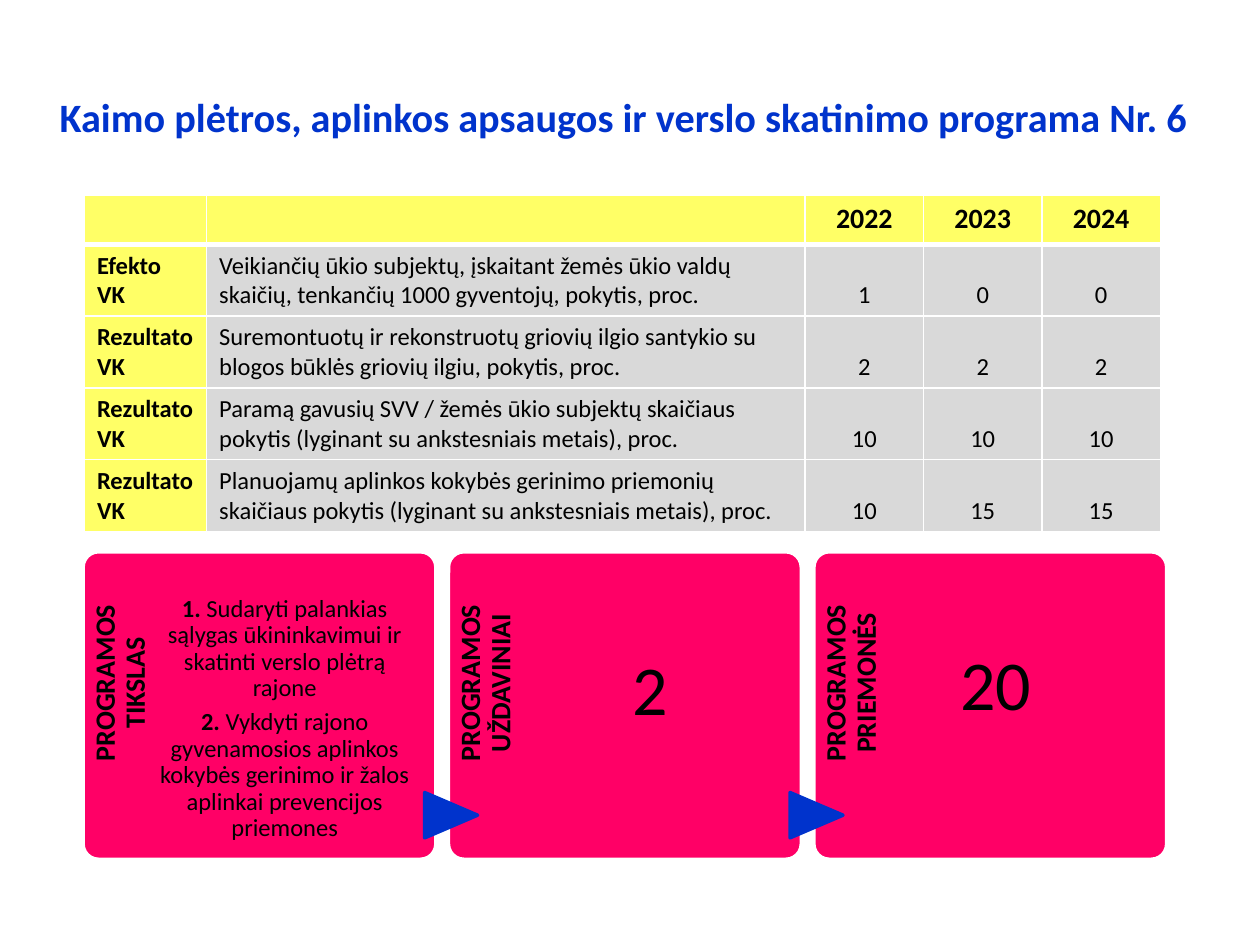
"""Build the slide on rural development programme No. 6: indicators, goals and measures."""

from dataclasses import dataclass

from lxml.etree import SubElement
from pptx import Presentation
from pptx.dml.color import RGBColor
from pptx.enum.shapes import MSO_SHAPE
from pptx.enum.text import MSO_ANCHOR, PP_ALIGN
from pptx.oxml.ns import qn
from pptx.shapes.autoshape import Shape
from pptx.slide import Slide
from pptx.table import _Cell
from pptx.text.text import _Paragraph
from pptx.util import Inches, Pt


@dataclass(frozen=True)
class Theme:
    font: str = "Calibri"
    blue: str = "0033CC"
    yellow: str = "FFFF66"
    grey: str = "D9D9D9"
    pink: str = "FF0066"
    black: str = "000000"
    white: str = "FFFFFF"
    title_size: float = 23
    heading_size: float = 16
    body_size: float = 14
    number_size: float = 40


@dataclass(frozen=True)
class Indicator:
    kind: str
    name: str
    values: tuple[int, int, int]


@dataclass(frozen=True)
class Card:
    heading: str
    paragraphs: tuple[tuple[str, str], ...]
    size: float
    top_inset: float
    left_inset: float = 0
    alignment: PP_ALIGN = PP_ALIGN.CENTER


THEME = Theme()
TITLE = "Kaimo plėtros, aplinkos apsaugos ir verslo skatinimo programa Nr. 6"
YEARS = (2022, 2023, 2024)
INDICATORS = (
    Indicator("Efekto VK", "Veikiančių ūkio subjektų, įskaitant žemės ūkio valdų skaičių, "
              "tenkančių 1000 gyventojų, pokytis, proc.", (1, 0, 0)),
    Indicator("Rezultato VK", "Suremontuotų ir rekonstruotų griovių ilgio santykio su "
              "blogos būklės griovių ilgiu, pokytis, proc.", (2, 2, 2)),
    Indicator("Rezultato VK", "Paramą gavusių SVV / žemės ūkio subjektų skaičiaus "
              "pokytis (lyginant su ankstesniais metais), proc.", (10, 10, 10)),
    Indicator("Rezultato VK", "Planuojamų aplinkos kokybės gerinimo priemonių "
              "skaičiaus pokytis (lyginant su ankstesniais metais), proc.", (10, 15, 15)),
)
CARDS = (
    Card("PROGRAMOS TIKSLAS", (
        ("1.", " Sudaryti palankias sąlygas ūkininkavimui ir skatinti verslo plėtrą rajone"),
        ("2.", " Vykdyti rajono gyvenamosios aplinkos kokybės gerinimo ir žalos aplinkai "
               "prevencijos priemones"),
    ), THEME.body_size, 0.35),
    Card("PROGRAMOS UŽDAVINIAI", (("", "2"),), THEME.number_size, 1.03),
    Card("PROGRAMOS PRIEMONĖS", (("", "20"),), THEME.number_size, 0.96, 0.6, PP_ALIGN.LEFT),
)
COLUMN_WIDTHS = (0.97, 4.75, 0.94, 0.94, 0.94)
HEADER_HEIGHT, ROW_HEIGHT = 0.39, 0.57
CARD_LEFT, CARD_TOP, CARD_WIDTH, CARD_HEIGHT, CARD_STEP = 0.66, 4.38, 2.8, 2.44, 2.9


def style(paragraph: _Paragraph, size: float, bold: bool | None = False,
          color: str = THEME.black, alignment: PP_ALIGN = PP_ALIGN.CENTER) -> None:
    paragraph.alignment = alignment
    font = paragraph.font
    font.name, font.size, font.bold = THEME.font, Pt(size), bold
    font.color.rgb = RGBColor.from_string(color)


def add_text_box(slide: Slide, left: float, top: float, width: float, height: float,
                 insets: tuple[float, float, float, float]) -> Shape:
    box = slide.shapes.add_textbox(Inches(left), Inches(top), Inches(width), Inches(height))
    frame = box.text_frame
    frame.word_wrap = True
    frame.margin_left, frame.margin_top, frame.margin_right, frame.margin_bottom = map(Inches, insets)
    return box


def add_shape(slide: Slide, kind: MSO_SHAPE, left: float, top: float, width: float,
              height: float, fill: str, line: str) -> Shape:
    shape = slide.shapes.add_shape(kind, Inches(left), Inches(top), Inches(width), Inches(height))
    shape.shadow.inherit = False
    shape.fill.solid()
    shape.fill.fore_color.rgb = RGBColor.from_string(fill)
    shape.line.color.rgb = RGBColor.from_string(line)
    shape.line.width = Pt(2)
    return shape


def add_borders(cell: _Cell, bottom: float, top: float) -> None:
    properties = cell._tc.get_or_add_tcPr()
    borders = (("a:lnL", 1), ("a:lnR", 1), ("a:lnT", top), ("a:lnB", bottom))
    for position, (tag, width) in enumerate(borders):
        border = SubElement(properties, qn(tag), w=str(Pt(width)))
        fill = SubElement(border, qn("a:solidFill"))
        SubElement(fill, qn("a:srgbClr"), val=THEME.white)
        properties.insert(position, border)


def add_title(slide: Slide) -> None:
    frame = add_text_box(slide, 0.35, 0.3, 9.21, 1.25, (0.1, 0.05, 0.1, 0.05)).text_frame
    frame.vertical_anchor = MSO_ANCHOR.MIDDLE
    frame.text = TITLE
    style(frame.paragraphs[0], THEME.title_size, True, THEME.blue)


def add_indicator_table(slide: Slide) -> None:
    rows = [("", "", *YEARS)] + [(item.kind, item.name, *item.values) for item in INDICATORS]
    heights = [HEADER_HEIGHT] + [ROW_HEIGHT] * len(INDICATORS)
    table = slide.shapes.add_table(
        len(rows), len(COLUMN_WIDTHS), Inches(0.67), Inches(1.55),
        Inches(sum(COLUMN_WIDTHS)), Inches(sum(heights))).table
    for column, width in zip(table.columns, COLUMN_WIDTHS):
        column.width = Inches(width)
    for row_index, (values, height) in enumerate(zip(rows, heights)):
        table.rows[row_index].height = Inches(height)
        for column_index, value in enumerate(values):
            is_header = row_index == 0
            is_label = is_header or column_index == 0
            is_number = column_index > 1
            cell = table.cell(row_index, column_index)
            cell.text = str(value)
            cell.fill.solid()
            cell.fill.fore_color.rgb = RGBColor.from_string(THEME.yellow if is_label else THEME.grey)
            paragraph = cell.text_frame.paragraphs[0]
            style(paragraph, THEME.heading_size if is_header else THEME.body_size, is_label,
                  alignment=PP_ALIGN.CENTER if is_number else PP_ALIGN.LEFT)
            if is_number and not is_header:
                paragraph.line_spacing = 2.0
            add_borders(cell, bottom=3 if is_header else 1, top=3 if row_index == 1 else 1)


def add_card(slide: Slide, card: Card, left: float, has_arrow: bool) -> None:
    panel = add_shape(slide, MSO_SHAPE.ROUNDED_RECTANGLE, left, CARD_TOP, CARD_WIDTH,
                      CARD_HEIGHT, THEME.pink, THEME.white)
    panel.adjustments[0] = 0.05

    heading = add_text_box(slide, left - 0.72, 5.1, 2, 0.56, (0, 0.06, 0.08, 0))
    heading.rotation = 270
    heading.text_frame.text = card.heading
    paragraph = heading.text_frame.paragraphs[0]
    style(paragraph, THEME.heading_size, True)
    paragraph.line_spacing = 0.9

    if has_arrow:
        arrow = add_shape(slide, MSO_SHAPE.FLOWCHART_EXTRACT, left - 0.16, 6.26, 0.36, 0.42,
                          THEME.blue, THEME.blue)
        arrow.rotation = 90

    frame = add_text_box(slide, left + 0.56, CARD_TOP, 2.08, CARD_HEIGHT,
                         (card.left_inset, card.top_inset, 0, 0)).text_frame
    for index, (number, text) in enumerate(card.paragraphs):
        paragraph = frame.add_paragraph() if index else frame.paragraphs[0]
        style(paragraph, card.size, alignment=card.alignment)
        paragraph.line_spacing = 0.9
        paragraph.space_after = Pt(4.5)
        if number:
            run = paragraph.add_run()
            run.text, run.font.bold = number, True
        paragraph.add_run().text = text


def main() -> None:
    presentation = Presentation()
    presentation.slide_width, presentation.slide_height = Inches(10), Inches(7.5)
    slide = presentation.slides.add_slide(presentation.slide_layouts[6])
    add_title(slide)
    add_indicator_table(slide)
    for index, card in enumerate(CARDS):
        add_card(slide, card, CARD_LEFT + index * CARD_STEP, has_arrow=index > 0)
    presentation.save("out.pptx")


if __name__ == "__main__":
    main()
